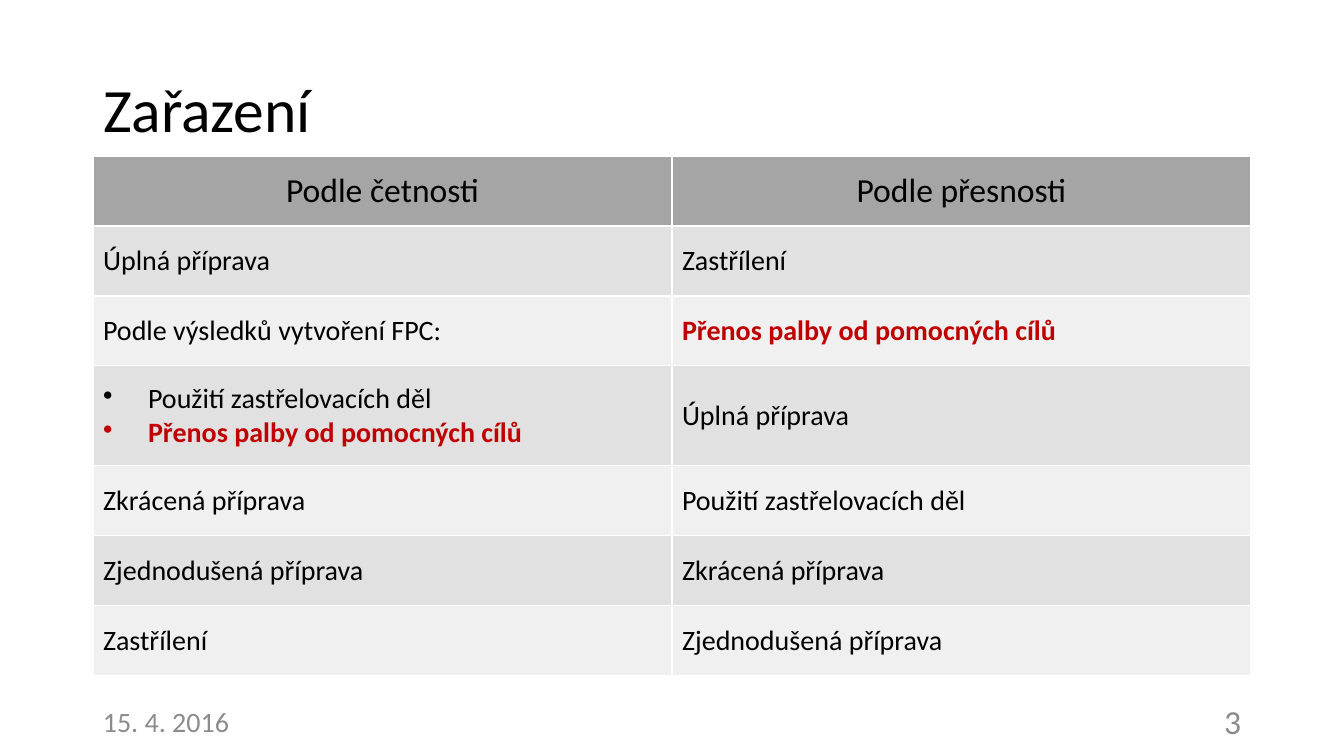
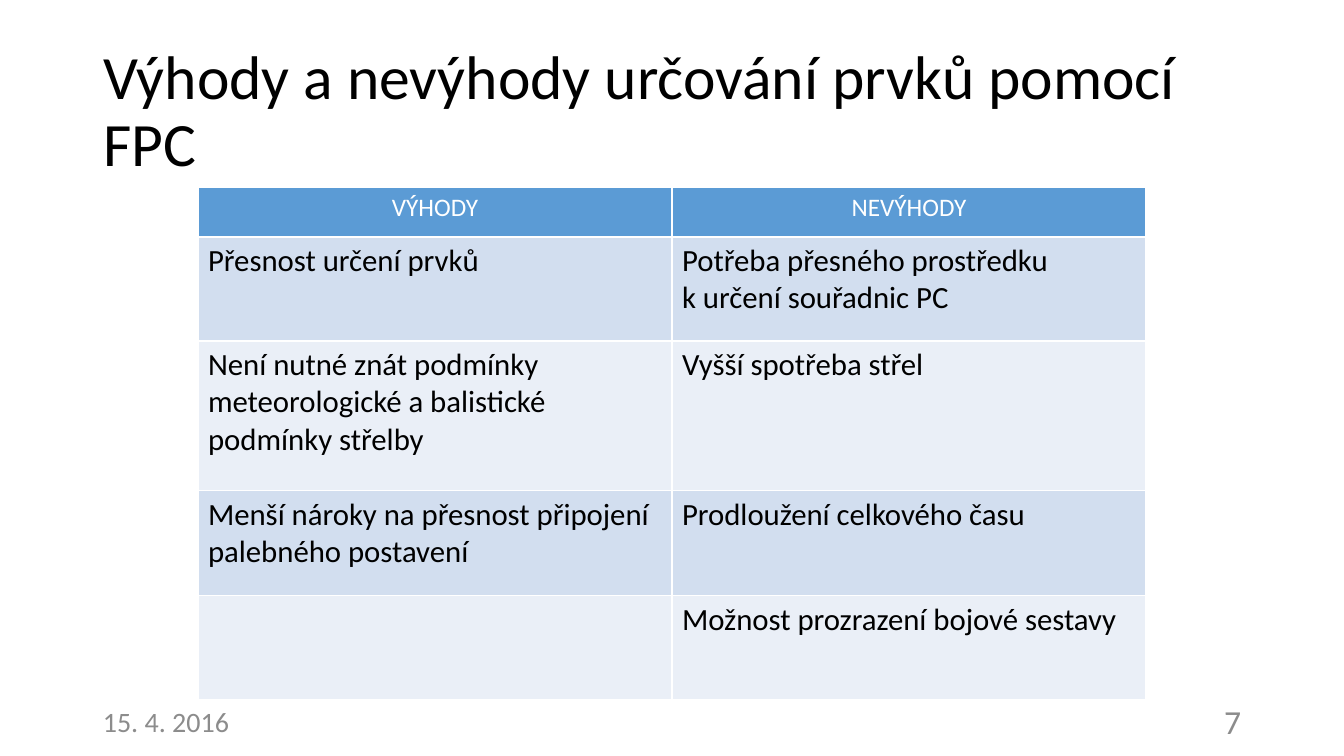
from lxml import etree
from pptx import Presentation
from pptx import util as u
from pptx.dml.color import RGBColor
from pptx.enum import text
from pptx.oxml.ns import qn

SLIDE_W, SLIDE_H = 1344, 756
EMU_PER_PX = 12192000 / SLIDE_W
FONT = "Calibri"
COLORS = {
    "text": "000000", "white": "FFFFFF", "footer": "8C8C8C", "accent": "C00000",
    "gray_head": "A5A5A5", "gray_dark": "E1E1E1", "gray_light": "F0F0F0",
    "blue_head": "5B9BD5", "blue_dark": "D2DEEF", "blue_light": "EAEFF7",
}
LEFT, CONTENT_W = 93, 1158
DATE = "15. 4. 2016"
TRANSFER = "Přenos palby od pomocných cílů"

ORDER_ROWS = [
    ("Podle četnosti", "Podle přesnosti"),
    ("Úplná příprava", "Zastřílení"),
    ("Podle výsledků vytvoření FPC:", TRANSFER),
    (["Použití zastřelovacích děl", TRANSFER], "Úplná příprava"),
    ("Zkrácená příprava", "Použití zastřelovacích děl"),
    ("Zjednodušená příprava", "Zkrácená příprava"),
    ("Zastřílení", "Zjednodušená příprava"),
]
PROS_CONS_ROWS = [
    ("VÝHODY", "NEVÝHODY"),
    ("Přesnost určení prvků", "Potřeba přesného prostředku\vk určení souřadnic PC"),
    ("Není nutné znát podmínky meteorologické a balistické podmínky střelby",
     "Vyšší spotřeba střel"),
    ("Menší nároky na přesnost připojení palebného postavení",
     "Prodloužení celkového času"),
    ("", "Možnost prozrazení bojové sestavy"),
]


def px(n):
    return u.Emu(round(n * EMU_PER_PX))


def rgb(name):
    return RGBColor.from_string(COLORS[name])


def style(p, size, color, align=text.PP_ALIGN.LEFT, bold=False):
    p.alignment = align
    p.font.name, p.font.size, p.font.bold = FONT, u.Pt(size), bold
    p.font.color.rgb = rgb(color)


def add_bullet(p, indent):
    pPr = p._p.get_or_add_pPr()
    pPr.set("marL", str(px(indent)))
    pPr.set("indent", str(-px(indent)))
    bullet = etree.Element(qn("a:buChar"), char="•")
    pPr.insert_element_before(bullet, "a:tabLst", "a:defRPr", "a:extLst")


def add_borders(cell):
    tcPr = cell._tc.get_or_add_tcPr()
    for side in ("lnL", "lnR", "lnT", "lnB"):
        ln = etree.SubElement(tcPr, qn(f"a:{side}"), w=str(u.Pt(1)))
        fill = etree.SubElement(ln, qn("a:solidFill"))
        etree.SubElement(fill, qn("a:srgbClr"), val=COLORS["white"])


def fill_cell(cell, content, fill, anchor, size, color, align):
    """A list as content becomes bulleted paragraphs."""
    add_borders(cell)
    cell.fill.solid()
    cell.fill.fore_color.rgb = rgb(fill)
    cell.vertical_anchor = anchor
    bulleted = isinstance(content, list)
    lines = content if bulleted else [content]
    tf = cell.text_frame
    for i, line in enumerate(lines):
        p = tf.add_paragraph() if i else tf.paragraphs[0]
        p.text = line
        key = line == TRANSFER
        style(p, size, "accent" if key else color, align, key)
        if bulleted:
            add_bullet(p, 45)


def add_grid(s, box, rows, heights, palette, anchor, head, body_size):
    """head is the (size, colour) of the header row text."""
    x, y, w = box
    table = s.shapes.add_table(len(rows), len(rows[0]), px(x), px(y),
                               px(w), px(sum(heights))).table
    table.horz_banding = False
    for col in table.columns:
        col.width = px(w // len(rows[0]))
    for r, (contents, height) in enumerate(zip(rows, heights)):
        table.rows[r].height = px(height)
        if r == 0:
            fill, size, color = f"{palette}_head", *head
            align = text.PP_ALIGN.CENTER
        else:
            fill = f"{palette}_dark" if r % 2 else f"{palette}_light"
            size, color, align = body_size, "text", text.PP_ALIGN.LEFT
        for c, content in enumerate(contents):
            fill_cell(table.cell(r, c), content, fill, anchor, size, color, align)


def add_footer(s, x, y, w, h, number):
    part_w = 302
    for left, label, size, align in (
            (x, DATE, 20, text.PP_ALIGN.LEFT),
            (x + w - part_w, str(number), 24, text.PP_ALIGN.RIGHT)):
        tf = s.shapes.add_textbox(px(left), px(y), px(part_w), px(h)).text_frame
        tf.word_wrap = True
        tf.vertical_anchor = text.MSO_ANCHOR.MIDDLE
        p = tf.paragraphs[0]
        p.text = label
        style(p, size, "footer", align)


def add_slide(prs, title, number):
    """Title-only slide with the shared title style and footer."""
    s = prs.slides.add_slide(prs.slide_layouts[5])
    sp = s.shapes.title
    sp.left, sp.top, sp.width, sp.height = px(LEFT), px(40), px(CONTENT_W), px(146)
    tf = sp.text_frame
    tf.text = title
    tf.word_wrap = True
    tf.auto_size = text.MSO_AUTO_SIZE.NONE
    tf.vertical_anchor = text.MSO_ANCHOR.MIDDLE
    p = tf.paragraphs[0]
    p.line_spacing = 0.9
    style(p, 44, "text")
    add_footer(s, LEFT, 701, CONTENT_W, 40, number)
    return s


def main():
    prs = Presentation()
    prs.slide_width, prs.slide_height = px(SLIDE_W), px(SLIDE_H)

    s = add_slide(prs, "Zařazení", 3)
    heights = [100 if isinstance(row[0], list) else 70 for row in ORDER_ROWS]
    add_grid(s, (LEFT, 156, CONTENT_W), ORDER_ROWS, heights, "gray",
             text.MSO_ANCHOR.MIDDLE, (24, "text"), 20)

    s = add_slide(prs, "Výhody a nevýhody určování prvků pomocí FPC", 7)
    add_grid(s, (198, 187, 948), PROS_CONS_ROWS, [50, 104, 150, 105, 104], "blue",
             text.MSO_ANCHOR.TOP, (18, "white"), 22)

    prs.save("out.pptx")


if __name__ == "__main__":
    main()
